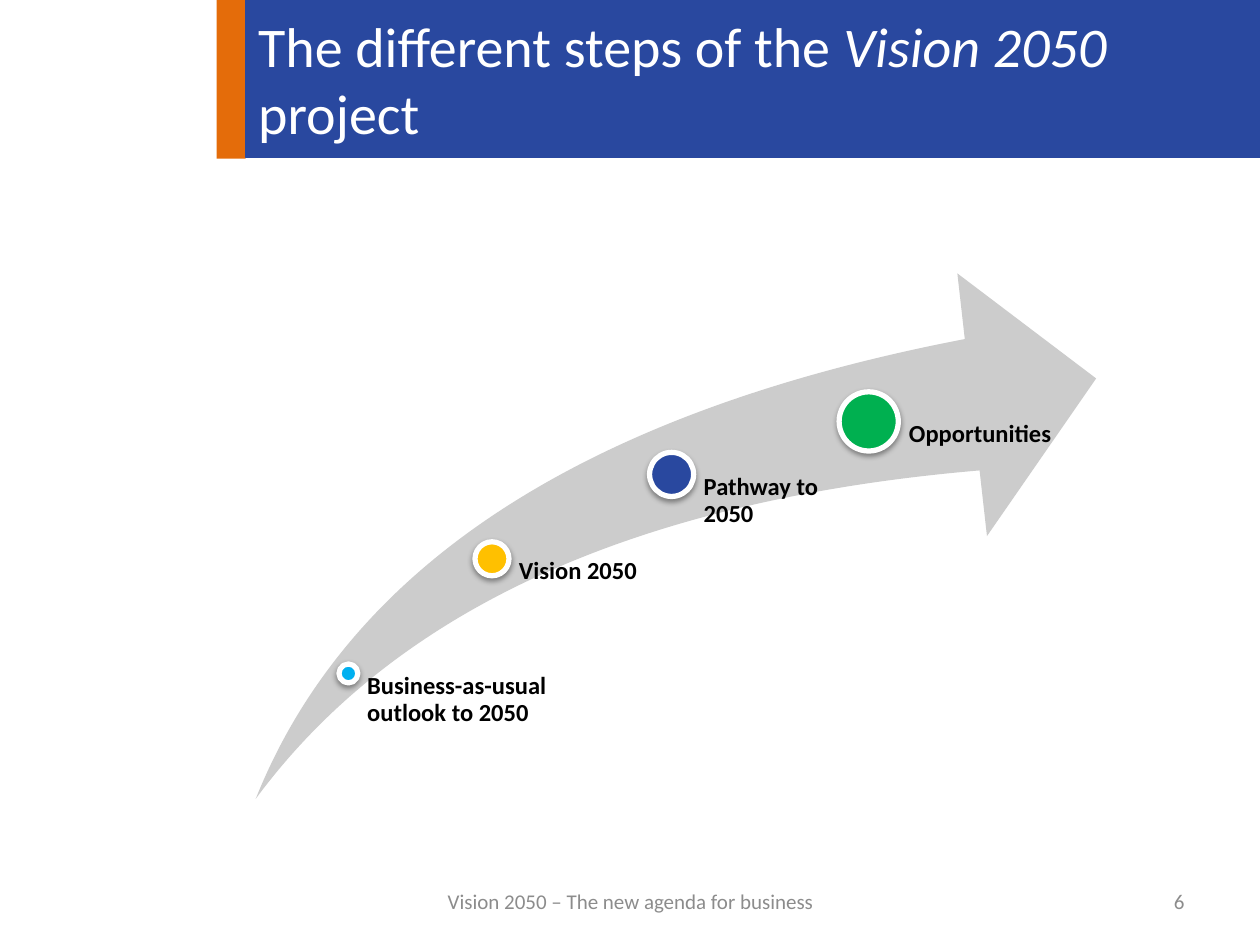
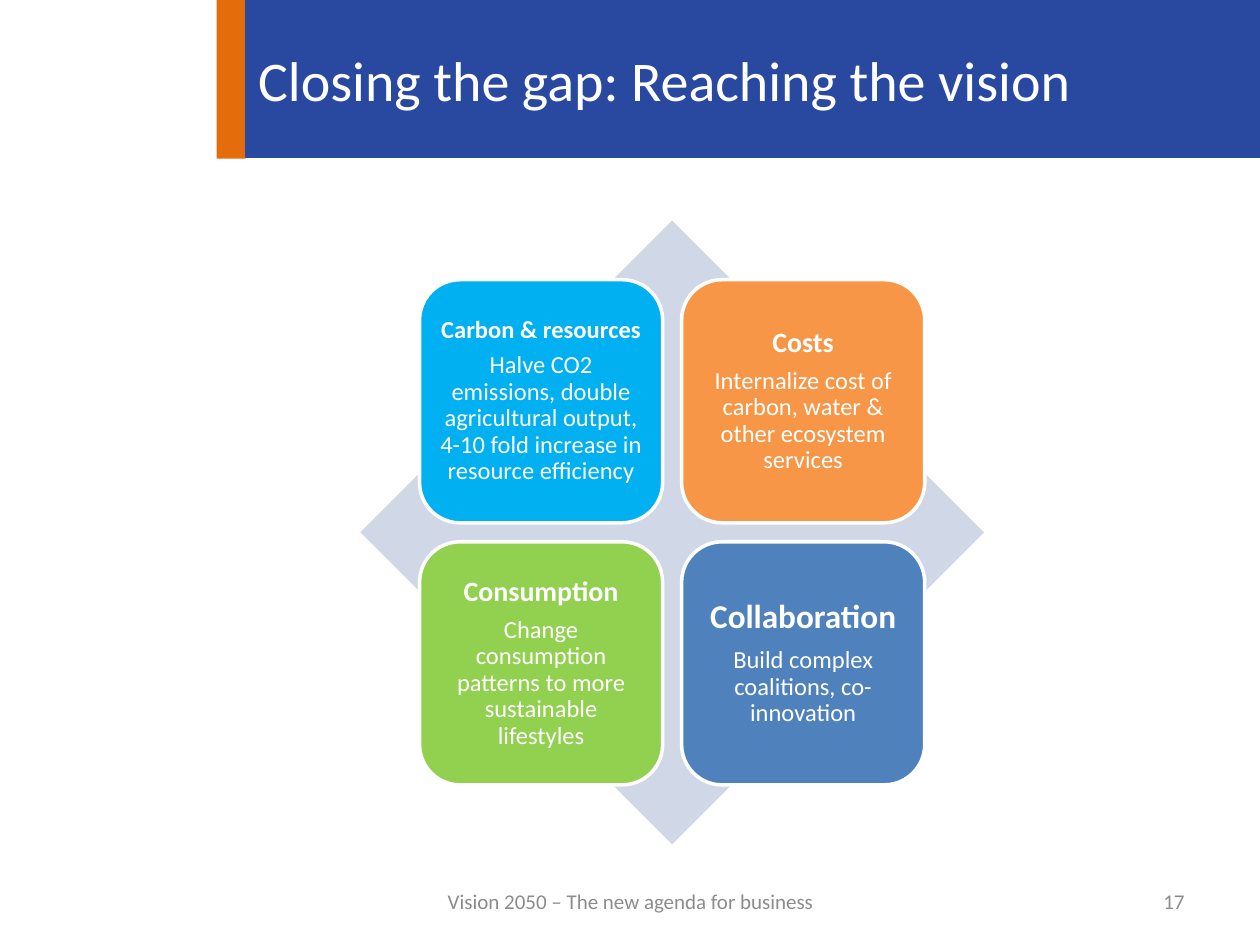
from typing import NamedTuple

from lxml.etree import SubElement as Sub
from pptx import Presentation
from pptx.dml.color import RGBColor
from pptx.enum.shapes import MSO_SHAPE as Geo
from pptx.enum.text import MSO_ANCHOR as Anchor, PP_ALIGN as Align
from pptx.oxml.ns import qn
from pptx.util import Inches, Pt

FONT = "Calibri"
WHITE, BLACK, GREY = "FFFFFF", "000000", "8C8C8C"
BLUE, ORANGE, SKY = "29489F", "E46C0A", "00B0F0"
FOOT = "Vision 2050 – The new agenda for business"


class Run(NamedTuple):
    text: str
    size: float
    color: str = WHITE
    bold: bool = False
    slant: bool = False


class Step(NamedTuple):
    text: str
    x: float  # centre of the dot
    y: float
    size: float
    color: str
    width: float = 1.4


class Card(NamedTuple):
    head: str
    body: str
    size: float
    inset: float
    color: str


STEPS = [
    Step("Business-as-usual outlook to 2050", 2.765, 5.345, 0.15, SKY, 1.77),
    Step("Vision 2050", 3.905, 4.435, 0.27, "FFC000"),
    Step("Pathway to 2050", 5.33, 3.765, 0.35, BLUE),
    Step("Opportunities", 6.895, 3.345, 0.47, "00B050"),
]

CARDS = [
    Card("Carbon & resources",
         "Halve CO2 emissions, double agricultural output, "
         "4-10 fold increase in resource efficiency", 14, 0.06, SKY),
    Card("Costs", "Internalize cost of carbon, water & other ecosystem services",
         16, 0.07, "F79646"),
    Card("Consumption", "Change consumption patterns to more sustainable lifestyles",
         16, 0.07, "92D050"),
    Card("Collaboration", "Build complex coalitions, co-innovation",
         19, 0.08, "4F81BD"),
]


def rgb(code: str) -> RGBColor:
    return RGBColor.from_string(code)


def draw(slide, geo, x: float, y: float, w: float, h: float,
         fill: str, line: str = "", width: float = 1):
    """Add a flat preset shape, with an outline only if one is named."""
    shape = slide.shapes.add_shape(geo, Inches(x), Inches(y), Inches(w), Inches(h))
    shape.shadow.inherit = False
    shape.fill.solid()
    shape.fill.fore_color.rgb = rgb(fill)
    if line:
        shape.line.color.rgb = rgb(line)
        shape.line.width = Pt(width)
    else:
        shape.line.fill.background()
    return shape


def box(slide, x: float, y: float, w: float, h: float):
    return slide.shapes.add_textbox(Inches(x), Inches(y), Inches(w), Inches(h))


def write(shape, paras: list[list[Run]], align=Align.LEFT, anchor=Anchor.MIDDLE,
          inset: tuple = (0.1, 0.05, 0.1, 0.05), tight: bool = False) -> None:
    """Fill a shape with paragraphs; tight ones suit the diagrams."""
    frame = shape.text_frame
    frame.word_wrap = True
    frame.vertical_anchor = anchor
    (frame.margin_left, frame.margin_top,
     frame.margin_right, frame.margin_bottom) = map(Inches, inset)
    for i, runs in enumerate(paras):
        para = frame.add_paragraph() if i else frame.paragraphs[0]
        para.alignment = align
        if tight:
            para.line_spacing = 0.9
            para.space_after = Pt(0.35 * runs[0].size)
        for item in runs:
            run = para.add_run()
            run.text = item.text
            font = run.font
            font.name, font.size = FONT, Pt(item.size)
            font.bold, font.italic = item.bold, item.slant
            font.color.rgb = rgb(item.color)


def shade(shape) -> None:
    """Give a shape a soft shadow straight below it."""
    effect = shape._element.spPr.find(qn("a:effectLst"))
    outer = Sub(effect, qn("a:outerShdw"), blurRad=str(Pt(3.1)),
                dist=str(Pt(1.6)), dir="5400000", rotWithShape="0")
    color = Sub(outer, qn("a:srgbClr"), val=BLACK)
    Sub(color, qn("a:alpha"), val="38000")


def start(deck, title: list[Run], number: int):
    """Add a slide with the title band and the footer."""
    slide = deck.slides.add_slide(deck.slide_layouts[6])
    draw(slide, Geo.RECTANGLE, 1.72, 0, 0.23, 1.26, ORANGE)
    band = draw(slide, Geo.RECTANGLE, 1.95, 0, 8.05, 1.25, BLUE, BLUE, 0.75)
    write(band, [title])
    write(box(slide, 7.17, 6.95, 2.33, 0.4), [[Run(str(number), 12, GREY)]], Align.RIGHT)
    write(box(slide, 3.42, 6.95, 3.17, 0.4), [[Run(FOOT, 12, GREY)]], Align.CENTER)
    return slide


def add_step(slide, step: Step, floor: float) -> None:
    """Put a dot on the arrow, with its label to the lower right."""
    half = step.size / 2
    shade(draw(slide, Geo.OVAL, step.x - half, step.y - half,
               step.size, step.size, step.color, WHITE, 3))
    label = box(slide, step.x + 0.07, step.y, step.width, floor - step.y)
    write(label, [[Run(step.text, 14, BLACK, True)]], anchor=Anchor.TOP,
          inset=(0.53 * step.size, 0, 0, 0), tight=True)


def add_card(slide, card: Card, x: float, y: float, side: float) -> None:
    shape = draw(slide, Geo.ROUNDED_RECTANGLE, x, y, side, side, card.color, WHITE, 2)
    write(shape, [[Run(card.head, card.size, bold=True)], [Run(card.body, 14)]],
          Align.CENTER, inset=(card.inset,) * 4, tight=True)


def main() -> None:
    deck = Presentation()
    deck.slide_width, deck.slide_height = Inches(10), Inches(7.5)

    # Steps along a rising arrow
    slide = start(deck, [Run("The different steps of the ", 32),
                         Run("Vision 2050 ", 32, slant=True),
                         Run("project", 32)], 6)
    top, high = 2.17, 4.17
    arrow = draw(slide, Geo.SWOOSH_ARROW, 2.03, top, 6.67, high, "CCCCCC")
    arrow.adjustments[0] = arrow.adjustments[1] = 0.25
    for step in STEPS:
        add_step(slide, step, top + high)

    # Two by two cards over a diamond
    slide = start(deck, [Run("Closing the gap: Reaching the vision", 32)], 17)
    draw(slide, Geo.DIAMOND, 2.86, 1.75, 4.95, 4.95, "D0D8E8")
    side, gap = 1.93, 0.15
    for i, card in enumerate(CARDS):
        row, col = divmod(i, 2)
        add_card(slide, card, 3.33 + col * (side + gap), 2.22 + row * (side + gap), side)

    deck.save("out.pptx")


if __name__ == "__main__":
    main()
